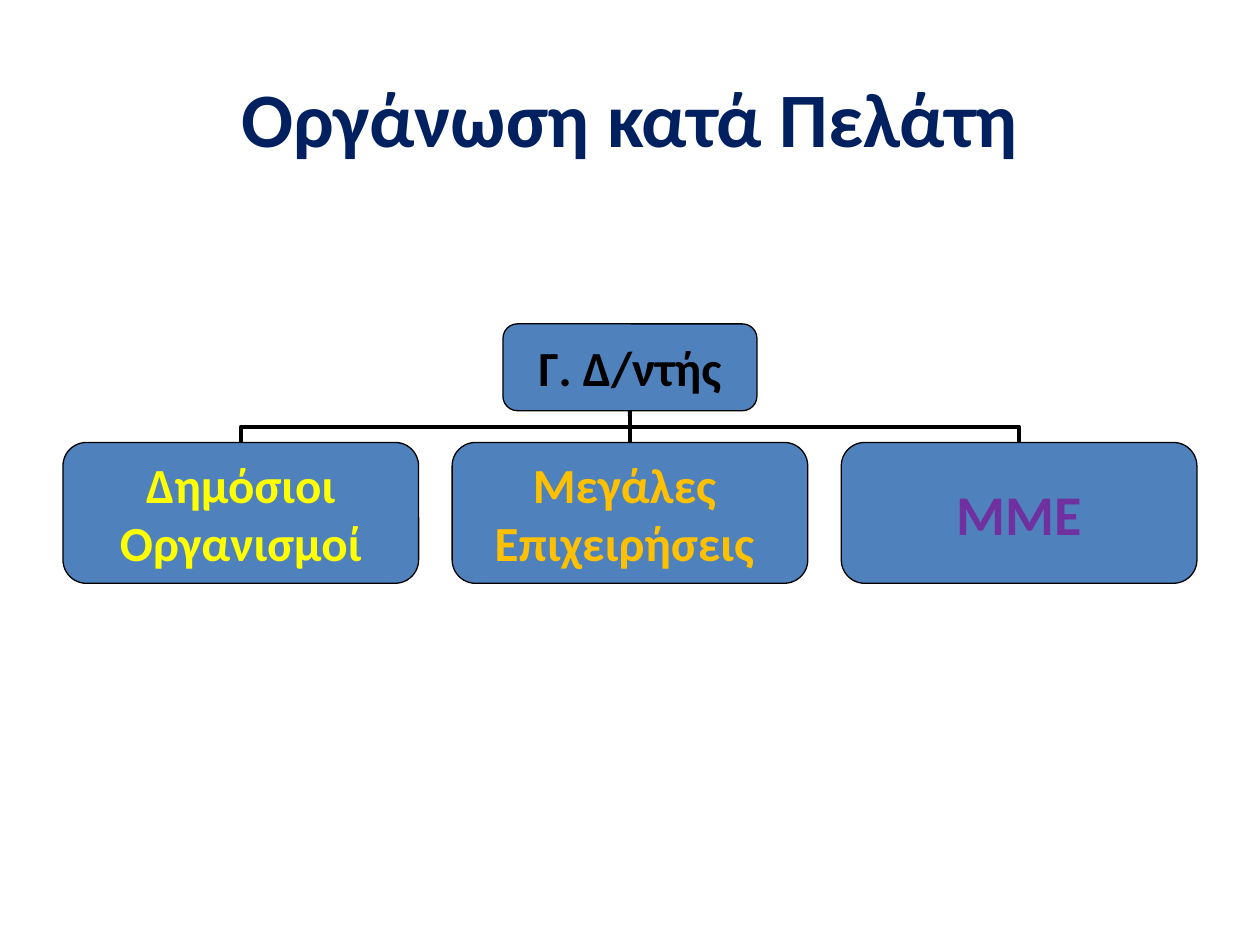
"""Build an organisation chart slide that groups a company by customer."""
from dataclasses import dataclass

from lxml import etree
from pptx import Presentation
from pptx.dml.color import RGBColor
from pptx.enum.shapes import MSO_CONNECTOR, MSO_SHAPE
from pptx.enum.text import MSO_ANCHOR, PP_ALIGN
from pptx.oxml.ns import qn
from pptx.shapes.autoshape import Shape
from pptx.shapes.connector import Connector
from pptx.slide import Slide
from pptx.util import Cm, Pt

ROUNDED = MSO_SHAPE.ROUNDED_RECTANGLE
ELBOW, STRAIGHT = MSO_CONNECTOR.ELBOW, MSO_CONNECTOR.STRAIGHT
CENTER, MIDDLE = PP_ALIGN.CENTER, MSO_ANCHOR.MIDDLE
TOP_SITE, BOTTOM_SITE = 0, 2
QUARTER_TURN = 5400000


@dataclass(frozen=True)
class Theme:
    font: str = "Calibri"
    title_color: str = "002060"
    box_fill: str = "4F81BD"
    ink: str = "000000"
    yellow: str = "FFFF00"
    orange: str = "FFC000"
    purple: str = "7030A0"
    title_size: int = 44
    box_size: int = 28
    large_size: int = 32
    outline: float = 0.75
    branch: float = 2.25


@dataclass(frozen=True)
class Box:
    text: str
    color: str
    left: float
    top: float
    width: float
    height: float
    size: int


THEME = Theme()
SLIDE_WIDTH, SLIDE_HEIGHT, MARGIN = 25.4, 19.05, 1.27
ROOT_WIDTH, ROOT_HEIGHT, ROOT_TOP = 5.12, 1.75, 6.53
UNIT_WIDTH, UNIT_HEIGHT, UNIT_TOP = 7.17, 2.84, 8.92
UNITS = (
    ("Δημόσιοι\nΟργανισμοί", THEME.yellow, THEME.box_size),
    ("Μεγάλες \nΕπιχειρήσεις ", THEME.orange, THEME.box_size),
    ("ΜΜΕ", THEME.purple, THEME.large_size),
)


def write_text(shape: Shape, text: str, *, size: int, color: str, wrap: bool,
               inset_x: float, inset_y: float) -> None:
    """Write centred bold lines into a shape."""
    frame = shape.text_frame
    frame.word_wrap = wrap
    frame.vertical_anchor = MIDDLE
    frame.margin_left = frame.margin_right = Cm(inset_x)
    frame.margin_top = frame.margin_bottom = Cm(inset_y)
    frame.text = text
    for paragraph in frame.paragraphs:
        paragraph.alignment = CENTER
        font = paragraph.runs[0].font
        font.name, font.size, font.bold = THEME.font, Pt(size), True
        font.color.rgb = RGBColor.from_string(color)


def draw_title(slide: Slide, text: str) -> None:
    """Draw the slide title."""
    title = slide.shapes.add_textbox(
        Cm(MARGIN), Cm(0.76), Cm(SLIDE_WIDTH - 2 * MARGIN), Cm(3.18))
    write_text(title, text, size=THEME.title_size, color=THEME.title_color,
               wrap=True, inset_x=0.25, inset_y=0.13)


def draw_box(slide: Slide, box: Box) -> Shape:
    """Draw one rounded box of the chart."""
    shape = slide.shapes.add_shape(
        ROUNDED, Cm(box.left), Cm(box.top), Cm(box.width), Cm(box.height))
    shape.shadow.inherit = False
    shape.fill.solid()
    shape.fill.fore_color.rgb = RGBColor.from_string(THEME.box_fill)
    shape.line.color.rgb = RGBColor.from_string(THEME.ink)
    shape.line.width = Pt(THEME.outline)
    write_text(shape, box.text, size=box.size, color=box.color,
               wrap=False, inset_x=0.2, inset_y=0.1)
    return shape


def turn_elbow(connector: Connector, unit: Shape, root: Shape) -> None:
    """Turn an elbow so that it leaves the unit upwards."""
    unit_x = unit.left + unit.width // 2
    root_x = root.left + root.width // 2
    root_bottom = root.top + root.height
    drop, span = unit.top - root_bottom, abs(unit_x - root_x)
    connector.left = (unit_x + root_x - drop) // 2
    connector.top = (unit.top + root_bottom - span) // 2
    connector.width, connector.height = drop, span
    on_right = unit_x > root_x
    transform = connector._element.spPr.find(qn("a:xfrm"))
    transform.set("rot", str(QUARTER_TURN if on_right else 3 * QUARTER_TURN))
    transform.set("flipH", "1" if on_right else "0")
    transform.set("flipV", "0")


def draw_branch(slide: Slide, unit: Shape, root: Shape, kind: int) -> None:
    """Connect a unit to the root box."""
    connector = slide.shapes.add_connector(kind, 0, 0, 0, 0)
    connector.begin_connect(unit, TOP_SITE)
    connector.end_connect(root, BOTTOM_SITE)
    if kind == ELBOW:
        turn_elbow(connector, unit, root)
    connector.line.color.rgb = RGBColor.from_string(THEME.ink)
    connector.line.width = Pt(THEME.branch)
    etree.SubElement(connector._element.spPr, qn("a:effectLst"))


def main() -> None:
    """Build and save the presentation."""
    presentation = Presentation()
    presentation.slide_width = Cm(SLIDE_WIDTH)
    presentation.slide_height = Cm(SLIDE_HEIGHT)
    slide = presentation.slides.add_slide(presentation.slide_layouts[6])
    draw_title(slide, "Οργάνωση κατά Πελάτη")
    root = draw_box(slide, Box(
        "Γ. Δ/ντής", THEME.ink, (SLIDE_WIDTH - ROOT_WIDTH) / 2, ROOT_TOP,
        ROOT_WIDTH, ROOT_HEIGHT, THEME.box_size))
    pitch = (SLIDE_WIDTH - 2 * MARGIN - UNIT_WIDTH) / (len(UNITS) - 1)
    for index, (text, color, size) in enumerate(UNITS):
        unit = draw_box(slide, Box(
            text, color, MARGIN + index * pitch, UNIT_TOP,
            UNIT_WIDTH, UNIT_HEIGHT, size))
        is_middle = index == len(UNITS) // 2
        draw_branch(slide, unit, root, STRAIGHT if is_middle else ELBOW)
    presentation.save("out.pptx")


if __name__ == "__main__":
    main()
